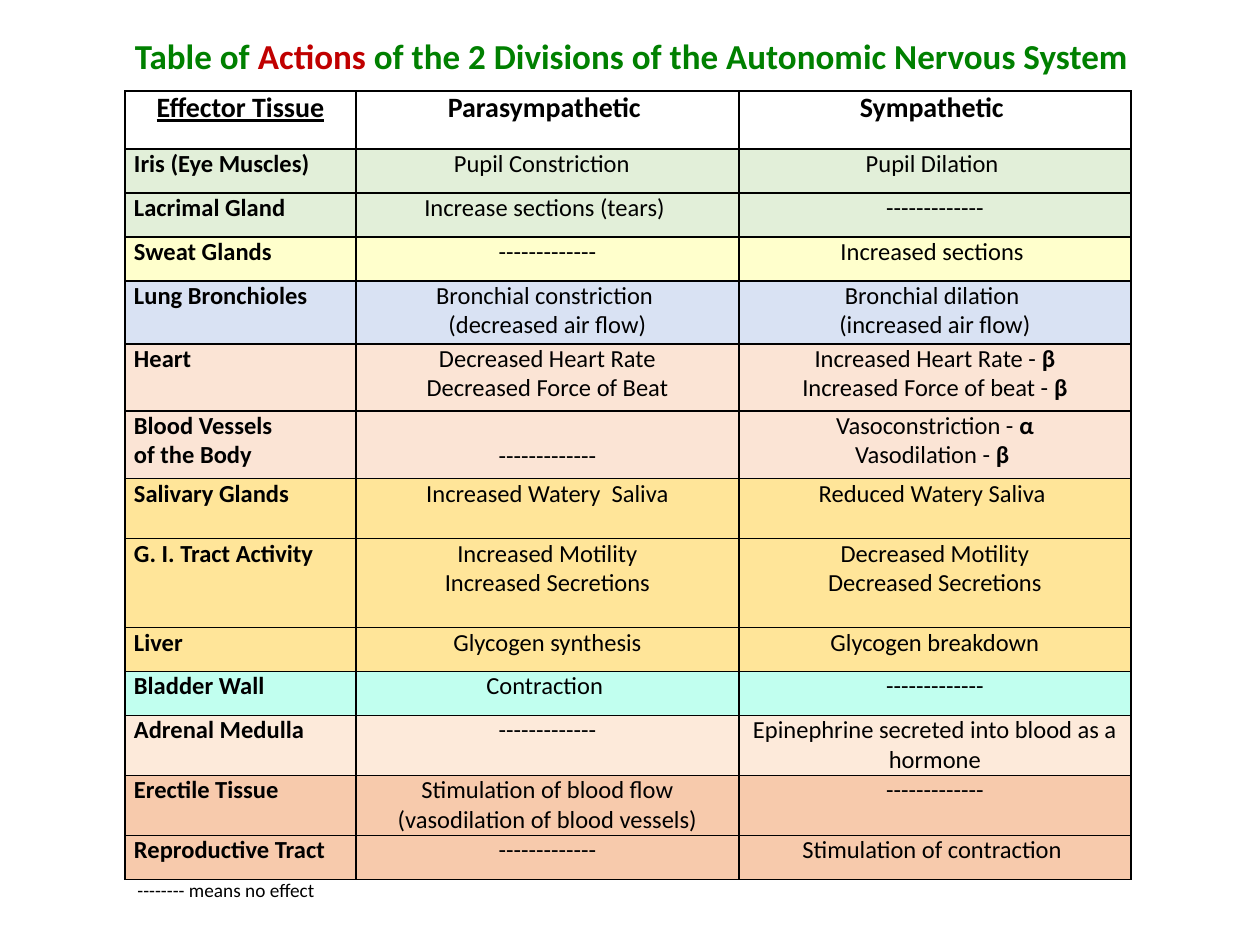
from dataclasses import dataclass
from lxml import etree
from pptx import Presentation, util as u
from pptx.dml.color import RGBColor
from pptx.enum import text
from pptx.oxml.ns import qn

SCALE = 914400 / 126
NONE = "-------------"
ALIGN = text.PP_ALIGN


@dataclass
class Theme:
    face: str = "Calibri"
    title: int = 20
    head: int = 16
    body: int = 14
    note: int = 11
    ink: str = "000000"
    green: str = "008000"
    red: str = "C00000"
    leaf: str = "E2EFD9"
    cream: str = "FFFFCC"
    sky: str = "D9E2F3"
    blush: str = "FBE4D5"
    gold: str = "FFE599"
    mint: str = "C1FFEF"
    peach: str = "FDEADA"
    clay: str = "F7CAAC"


def px(num):
    return u.Emu(round(num * SCALE))


class Deck:
    def __init__(self, theme):
        self.theme = theme
        self.prs = Presentation()
        self.prs.slide_width, self.prs.slide_height = px(1260), px(945)
        self.slide = self.prs.slides.add_slide(self.prs.slide_layouts[6])

    def font(self, para, size, bold=False, color=None):
        font = para.font
        font.name, font.size, font.bold = self.theme.face, u.Pt(size), bold
        if color:
            font.color.rgb = RGBColor.from_string(color)

    def label(self, box, runs, size, bold=False, align=ALIGN.LEFT):
        frame = self.slide.shapes.add_textbox(*map(px, box)).text_frame
        frame.word_wrap = False
        frame.auto_size = text.MSO_AUTO_SIZE.SHAPE_TO_FIT_TEXT
        para = frame.paragraphs[0]
        para.alignment = align
        self.font(para, size, bold)
        for words, color in runs:
            run = para.add_run()
            run.text = words
            run.font.color.rgb = RGBColor.from_string(color)

    def border(self, cell):
        props = cell._tc.get_or_add_tcPr()
        for spot, side in enumerate(("lnL", "lnR", "lnT", "lnB")):
            line = etree.Element(qn(f"a:{side}"), w=str(u.Pt(1)))
            fill = etree.SubElement(line, qn("a:solidFill"))
            etree.SubElement(fill, qn("a:srgbClr"), val=self.theme.ink)
            props.insert(spot, line)

    def cell(self, cell, words, size, bold, align, fill, top=0):
        cell.margin_left = cell.margin_right = px(9)
        cell.margin_top, cell.margin_bottom = px(top), 0
        if fill:
            cell.fill.solid()
            cell.fill.fore_color.rgb = RGBColor.from_string(fill)
        else:
            cell.fill.background()
        self.border(cell)
        frame = cell.text_frame
        for spot, line in enumerate(words.split("\n")):
            para = frame.add_paragraph() if spot else frame.paragraphs[0]
            para.alignment = align
            self.font(para, size, bold, self.theme.ink)
            lead, dash, sign = line.partition(" - ")
            para.add_run().text = lead + dash
            if sign:
                run = para.add_run()
                run.text = sign
                run.font.bold = True

    def table(self, left, top, cols, heads, rows):
        high = [row[0] for row in rows]
        table = self.slide.shapes.add_table(
            len(rows) + 1, len(cols), px(left), px(top),
            px(sum(cols)), px(58 + sum(high))).table
        table.first_row = table.horz_banding = False
        for col, wide in zip(table.columns, cols):
            col.width = px(wide)
        for row, tall in zip(table.rows, [58] + high):
            row.height = px(tall)
        for col, words in enumerate(heads):
            self.cell(table.cell(0, col), words, self.theme.head, True,
                      ALIGN.CENTER, None)
        table.cell(0, 0).text_frame.paragraphs[0].font.underline = True
        for num, (_, fill, *items) in enumerate(rows, 1):
            for col, words in enumerate(items):
                first = col == 0
                side = ALIGN.LEFT if "\n" in words else ALIGN.JUSTIFY
                drop = 30 if words == NONE and "\n" in items[0] else 0
                self.cell(table.cell(num, col), words, self.theme.body, first,
                          side if first else ALIGN.CENTER, fill, drop)


def main():
    t = Theme()
    deck = Deck(t)
    heads = ["Effector Tissue", "Parasympathetic ", "Sympathetic "]
    rows = [
        (44, t.leaf, "Iris (Eye Muscles)", "Pupil Constriction  ",
         "Pupil Dilation "),
        (44, t.leaf, "Lacrimal Gland", "Increase sections (tears) ", NONE),
        (44, t.cream, "Sweat Glands", NONE, "Increased sections "),
        (63, t.sky, "Lung Bronchioles",
         "Bronchial constriction \n(decreased air flow)",
         "Bronchial dilation \n(increased air flow)"),
        (67, t.blush, "Heart",
         "Decreased Heart Rate\nDecreased Force of Beat",
         "Increased Heart Rate - β\nIncreased Force of beat - β"),
        (68, t.blush, "Blood Vessels\nof the Body", NONE,
         "Vasoconstriction - α\nVasodilation - β "),
        (60, t.gold, "Salivary Glands", "Increased Watery  Saliva",
         "Reduced Watery Saliva "),
        (89, t.gold, "G. I. Tract Activity ",
         "Increased Motility\nIncreased Secretions",
         "Decreased Motility\nDecreased Secretions"),
        (44, t.gold, "Liver", "Glycogen synthesis", "Glycogen breakdown"),
        (44, t.mint, "Bladder Wall", "Contraction ", NONE),
        (60, t.peach, "Adrenal Medulla", NONE,
         "Epinephrine secreted into blood as a hormone"),
        (60, t.clay, "Erectile Tissue ",
         "Stimulation of blood flow (vasodilation of blood vessels)", NONE),
        (44, t.clay, "Reproductive Tract", NONE,
         "Stimulation of contraction "),
    ]
    deck.table(125, 91, [231, 383, 392], heads, rows)
    deck.label((118, 28, 1027, 55), [
        ("Table of ", t.green), ("Actions", t.red),
        (" of the 2 Divisions of the Autonomic Nervous System", t.green),
    ], t.title, True, ALIGN.CENTER)
    deck.label((125, 872, 205, 37), [("-------- means no effect", t.ink)],
               t.note)
    deck.prs.save("out.pptx")


if __name__ == "__main__":
    main()
